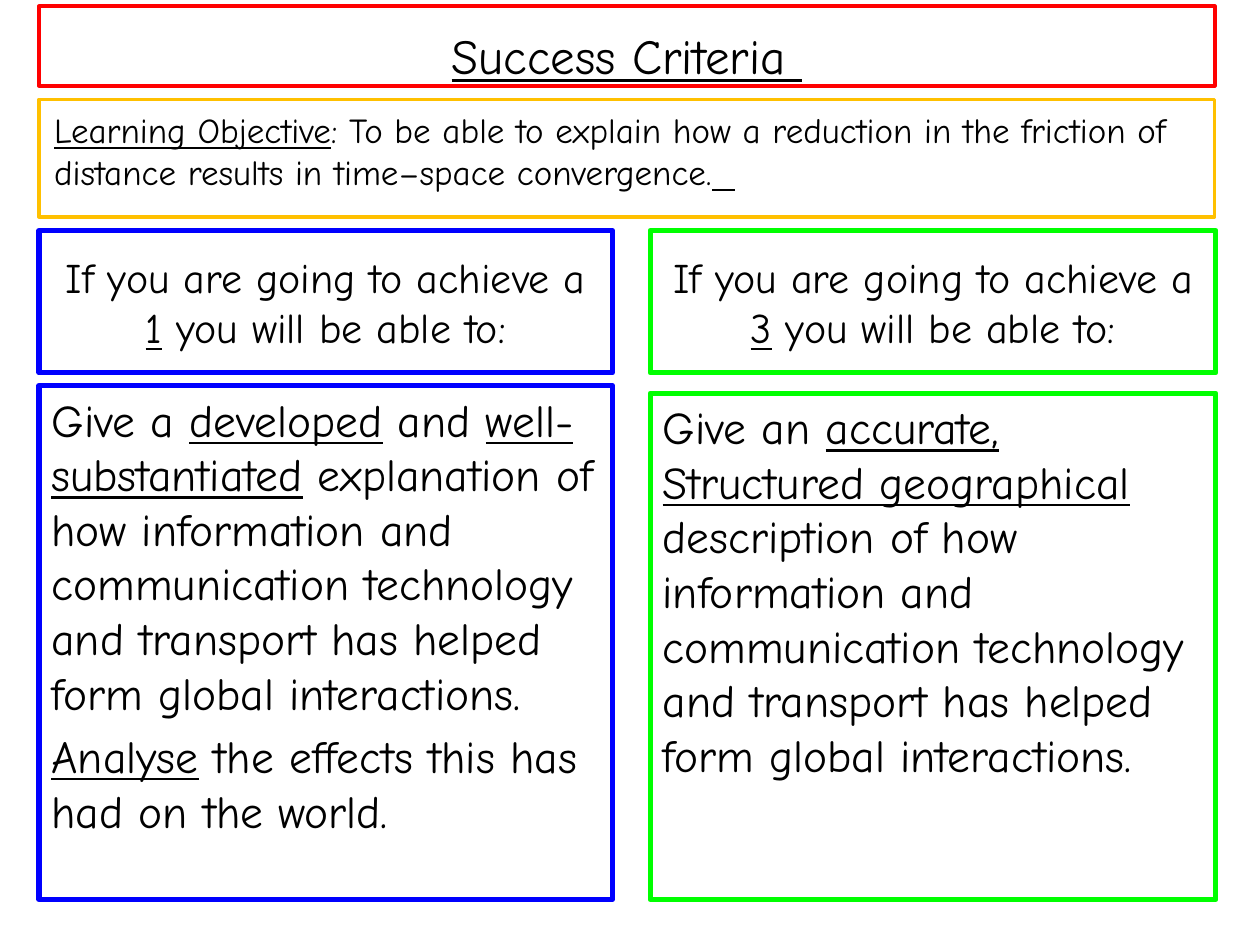
"""Build a success criteria slide with a learning objective and two grade columns."""
from pptx import Presentation
from pptx import util as u
from pptx.dml.color import RGBColor
from pptx.enum import shapes, text

COLOURS = {
    "ink": "000000",
    "paper": "FFFFFF",
    "title": "FF0000",
    "objective": "FFC000",
    "grade 1": "0000FF",
    "grade 3": "00FF00",
}


class CriteriaSlide:
    """Hold the style and the current slide; underscores enclose underlined words."""

    font = "Comic Neue"

    def __init__(self, deck):
        self.slide = deck.slides.add_slide(deck.slide_layouts[5])

    def colour(self, name):
        return RGBColor.from_string(COLOURS[name])

    def frame(self, box, colour, weight):
        box.fill.solid()
        box.fill.fore_color.rgb = self.colour("paper")
        box.line.color.rgb = self.colour(colour)
        box.line.width = u.Pt(weight)

    def set_text(self, box, paragraphs, size, align, anchor, gap=0, insets=(0.1, 0.05)):
        frame = box.text_frame
        frame.word_wrap = True
        frame.auto_size = text.MSO_AUTO_SIZE.NONE
        frame.vertical_anchor = anchor
        frame.margin_left = frame.margin_right = u.Inches(insets[0])
        frame.margin_top = frame.margin_bottom = u.Inches(insets[1])
        for index, wording in enumerate(paragraphs):
            paragraph = frame.add_paragraph() if index else frame.paragraphs[0]
            paragraph.alignment = align
            paragraph.space_before = u.Pt(gap)
            paragraph.font.name = self.font
            paragraph.font.size = u.Pt(size)
            paragraph.font.color.rgb = self.colour("ink")
            for part, piece in enumerate(wording.split("_")):
                if piece:
                    run = paragraph.add_run()
                    run.text = piece
                    run.font.underline = part % 2 == 1

    def title(self, wording, place):
        title = self.slide.shapes.title
        title.left, title.top, title.width, title.height = map(u.Inches, place)
        self.frame(title, "title", 2.25)
        self.set_text(title, [wording], 28, text.PP_ALIGN.CENTER,
                      text.MSO_ANCHOR.TOP, insets=(0.12, 0.07))
        title.text_frame.word_wrap = False
        title.text_frame.paragraphs[0].line_spacing = 1.17

    def panel(self, paragraphs, place, colour, size, weight=3,
              align=text.PP_ALIGN.LEFT, anchor=text.MSO_ANCHOR.TOP, **spacing):
        panel = self.slide.shapes.add_shape(
            shapes.MSO_SHAPE.RECTANGLE, *map(u.Inches, place))
        panel.shadow.inherit = False
        self.frame(panel, colour, weight)
        self.set_text(panel, paragraphs, size, align, anchor, **spacing)


def main():
    deck = Presentation()
    deck.slide_width, deck.slide_height = u.Inches(10), u.Inches(7.5)
    page = CriteriaSlide(deck)
    left, full_width, bottom = 0.31, 9.33, 7.14

    page.title("_Success Criteria _", (left, 0.05, full_width, 0.63))
    page.panel(
        ["_Learning Objective_: To be able to explain how a reduction in the friction "
         "of distance results in time–space convergence._  _"],
        (left, 0.79, full_width, 0.93), "objective", 20, weight=2.25,
        insets=(0.12, 0.07))

    outcome = ("of how information and communication technology and transport "
               "has helped form global interactions.")
    grades = [
        ("1", left, 4.55, 3.06, 5.2,
         [f"Give a _developed_ and _well-substantiated_ explanation {outcome}",
          "_Analyse_ the effects this has had on the world."]),
        ("3", 5.16, 4.49, 3.12, 0,
         ["Give an _accurate,_",
          f"_Structured geographical_ description {outcome}"]),
    ]
    for grade, x, width, top, gap, criteria in grades:
        colour = f"grade {grade}"
        page.panel([f"If you are going to achieve a _{grade}_ you will be able to:"],
                   (x, 1.83, width, 1.13), colour, 24,
                   align=text.PP_ALIGN.CENTER, anchor=text.MSO_ANCHOR.MIDDLE)
        page.panel(criteria, (x, top, width, bottom - top), colour, 26, gap=gap)

    deck.save("out.pptx")


if __name__ == "__main__":
    main()
